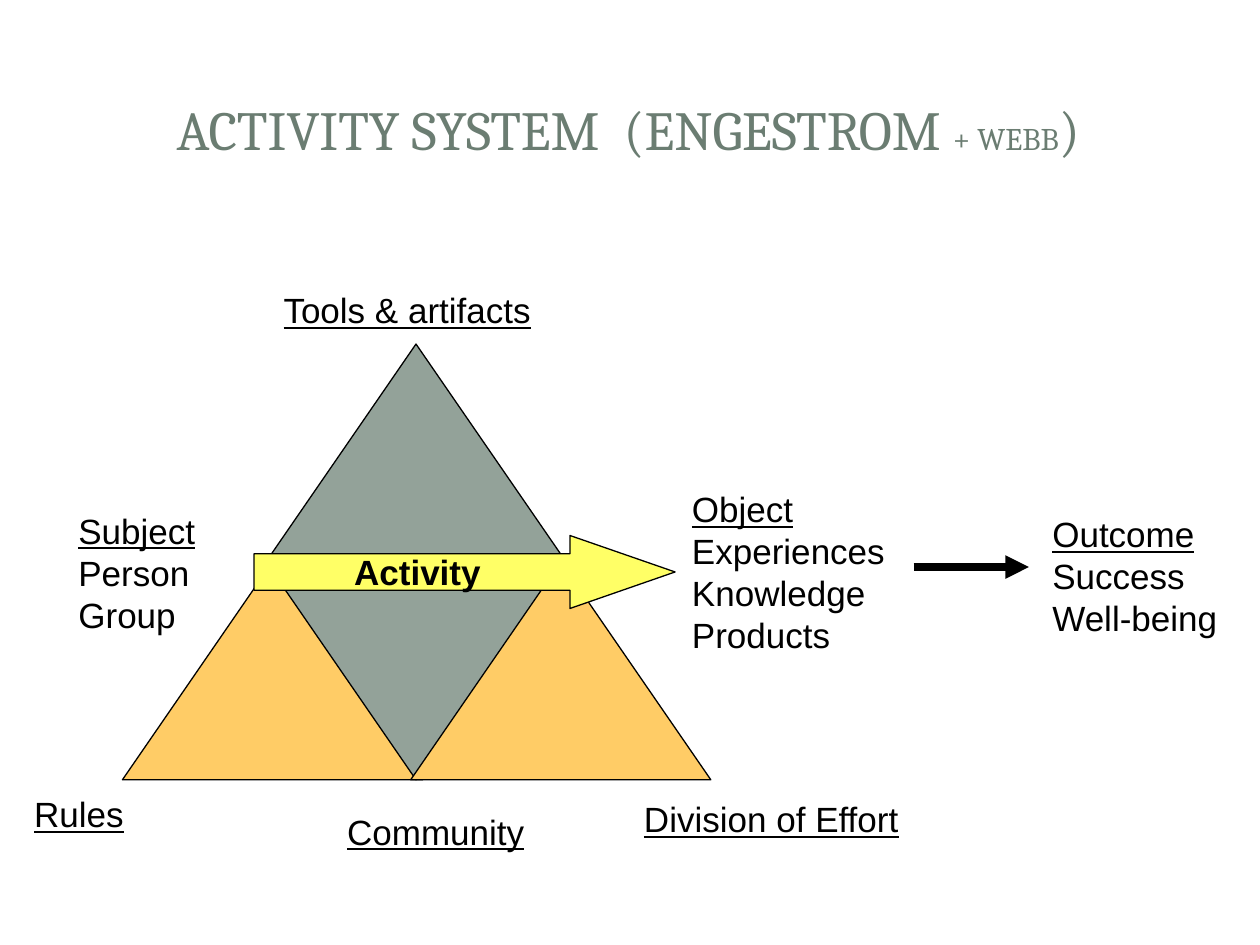
from lxml import etree
from pptx import Presentation
from pptx.dml.color import RGBColor
from pptx.enum.shapes import MSO_CONNECTOR as Connector, MSO_SHAPE as Shape
from pptx.enum.text import MSO_ANCHOR as Anchor, MSO_AUTO_SIZE as AutoSize, PP_ALIGN as Align
from pptx.oxml.ns import qn
from pptx.util import Pt

BLACK = "000000"
SAGE = "93A299"
ORANGE = "FFCC66"
YELLOW = "FFFF66"
TITLE_COLOR = "6B7D72"
TRIANGLE_WIDTH, TRIANGLE_HEIGHT = 171.5, 124.5
UPPER_TOP = 196.6
LOWER_TOP = UPPER_TOP + TRIANGLE_HEIGHT
CENTER_LEFT = 152


def color(hex_string):
    return RGBColor.from_string(hex_string)


def format_font(run, name, size, hex_string):
    run.font.name = name
    run.font.size = Pt(size)
    run.font.color.rgb = color(hex_string)


def set_title(slide, parts):
    title = slide.shapes.title
    title.left, title.top, title.width, title.height = Pt(34), Pt(32.4), Pt(650), Pt(82)
    text_frame = title.text_frame
    text_frame.vertical_anchor = Anchor.MIDDLE
    paragraph = text_frame.paragraphs[0]
    paragraph.alignment = Align.CENTER
    for text, size in parts:
        run = paragraph.add_run()
        run.text = text
        format_font(run, "Cambria", size, TITLE_COLOR)


def add_filled_shape(slide, kind, left, top, width, height, fill):
    shape = slide.shapes.add_shape(kind, Pt(left), Pt(top), Pt(width), Pt(height))
    shape.shadow.inherit = False
    shape.fill.solid()
    shape.fill.fore_color.rgb = color(fill)
    shape.line.color.rgb = color(BLACK)
    shape.line.width = Pt(0.75)
    return shape


def add_triangle(slide, left, top, fill, rotation=0):
    shape = add_filled_shape(slide, Shape.ISOSCELES_TRIANGLE, left, top,
                             TRIANGLE_WIDTH, TRIANGLE_HEIGHT, fill)
    shape.rotation = rotation


def add_label(slide, left, top, width, heading, details=(), bold=False, align=Align.LEFT):
    lines = [heading, *details]
    box = slide.shapes.add_textbox(Pt(left), Pt(top), Pt(width), Pt(6 + 24 * len(lines)))
    text_frame = box.text_frame
    text_frame.word_wrap = False
    text_frame.auto_size = AutoSize.SHAPE_TO_FIT_TEXT
    text_frame.margin_left = text_frame.margin_right = Pt(3)
    text_frame.margin_top = text_frame.margin_bottom = Pt(3)
    paragraph = text_frame.paragraphs[0]
    paragraph.text = "\v".join(lines)
    paragraph.alignment = align
    for run in paragraph.runs:
        format_font(run, "Arial", 20, BLACK)
        run.font.bold = bold
    paragraph.runs[0].font.underline = not bold


def add_arrow(slide, start, end, top):
    connector = slide.shapes.add_connector(Connector.STRAIGHT, Pt(start), Pt(top), Pt(end), Pt(top))
    connector.line.color.rgb = color(BLACK)
    connector.line.width = Pt(4.5)
    etree.SubElement(connector.line._get_or_add_ln(), qn("a:tailEnd"), type="triangle")
    etree.SubElement(connector._element.spPr, qn("a:effectLst"))


def main():
    presentation = Presentation()
    presentation.slide_width, presentation.slide_height = Pt(720), Pt(540)
    slide = presentation.slides.add_slide(presentation.slide_layouts[5])
    set_title(slide, [("ACTIVITY SYSTEM  (ENGESTROM ", 31.5), ("+ WEBB", 18), (")", 31.5)])

    add_triangle(slide, CENTER_LEFT, UPPER_TOP, SAGE)
    add_label(slide, 159, 162, 148, "Tools & artifacts")
    add_triangle(slide, 70, LOWER_TOP, ORANGE)
    add_label(slide, 16.5, 450, 60, "Rules")
    add_triangle(slide, CENTER_LEFT, LOWER_TOP, SAGE, rotation=180)
    add_label(slide, 188, 460, 122, "Community", align=Align.CENTER)
    add_triangle(slide, 234.7, LOWER_TOP, ORANGE)
    add_label(slide, 365, 453, 173, "Division of Effort")

    add_label(slide, 41.8, 288, 81, "Subject", ["Person", "Group"])
    activity = add_filled_shape(slide, Shape.RIGHT_ARROW, 145.2, 306, 240.6, 41.7, YELLOW)
    activity.adjustments[1] = 1.44
    add_label(slide, 199.4, 311.8, 91, "Activity", bold=True)
    add_label(slide, 392.4, 275.8, 126, "Object", ["Experiences", "Knowledge", "Products"])
    add_label(slide, 598.3, 290, 112, "Outcome", ["Success", "Well-being"])
    add_arrow(slide, 522, 588, 324)

    presentation.save("out.pptx")


if __name__ == "__main__":
    main()
